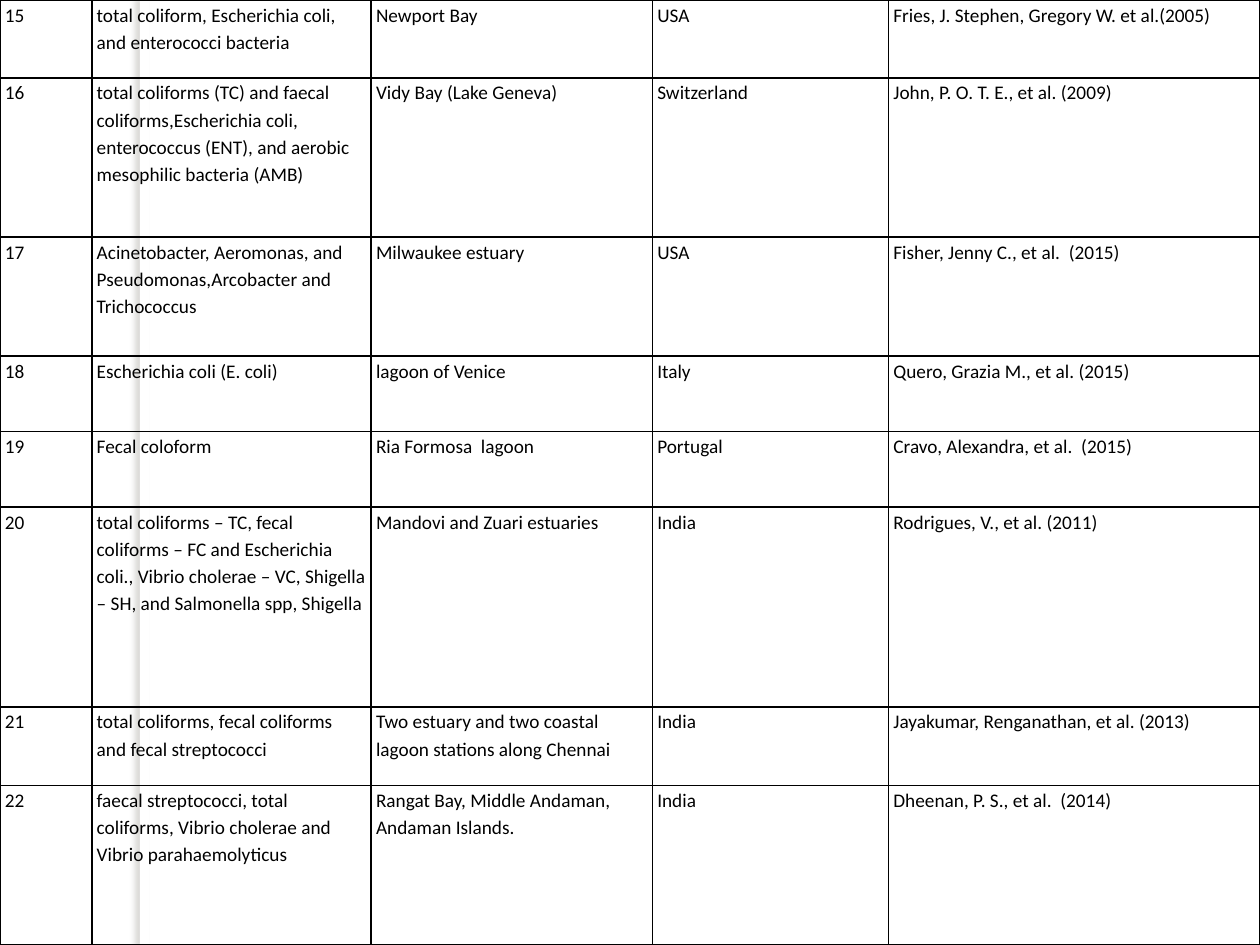
from lxml import etree
from pptx import Presentation
from pptx.dml.color import RGBColor
from pptx.enum import shapes
from pptx.oxml import parse_xml
from pptx.oxml.ns import nsdecls
from pptx.util import Cm, Pt

BLACK = RGBColor(0, 0, 0)
WHITE = RGBColor(255, 255, 255)
SHADE = RGBColor(0x73, 0x6F, 0x63)

WIDTHS = [1.85, 5.63, 5.67, 4.76, 7.49]
HEIGHTS = [1.57, 3.21, 2.4, 1.52, 1.52, 4.03, 1.58, 3.21]
FIRST = 15
# Bacteria, water body, country, reference
STUDIES = [
    ("total coliform, Escherichia coli, and enterococci bacteria",
     "Newport Bay", "USA", "Fries, J. Stephen, Gregory W. et al.(2005)"),
    ("total coliforms (TC) and faecal coliforms,Escherichia coli, "
     "enterococcus (ENT), and aerobic mesophilic bacteria (AMB)",
     "Vidy Bay (Lake Geneva)", "Switzerland", "John, P. O. T. E., et al. (2009)"),
    ("Acinetobacter, Aeromonas, and Pseudomonas,Arcobacter and Trichococcus",
     "Milwaukee estuary", "USA", "Fisher, Jenny C., et al.  (2015)"),
    ("Escherichia coli (E. coli)",
     "lagoon of Venice", "Italy", "Quero, Grazia M., et al. (2015)"),
    ("Fecal coloform",
     "Ria Formosa  lagoon", "Portugal", "Cravo, Alexandra, et al.  (2015)"),
    ("total coliforms – TC, fecal coliforms – FC and Escherichia coli., "
     "Vibrio cholerae – VC, Shigella – SH, and Salmonella spp, Shigella",
     "Mandovi and Zuari estuaries", "India", "Rodrigues, V., et al. (2011)"),
    ("total coliforms, fecal coliforms and fecal streptococci",
     "Two estuary and two coastal lagoon stations along Chennai",
     "India", "Jayakumar, Renganathan, et al. (2013)"),
    ("faecal streptococci, total coliforms, Vibrio cholerae and Vibrio parahaemolyticus",
     "Rangat Bay, Middle Andaman, Andaman Islands.",
     "India", "Dheenan, P. S., et al.  (2014)"),
]
INSETS = {"margin_left": Cm(0.1), "margin_right": Cm(0.1),
          "margin_top": 0, "margin_bottom": 0}
FONT = {"name": "Calibri", "size": Pt(11), "bold": False}


def put(obj, form):
    """Set each attribute of obj that form names."""
    for key, val in form.items():
        setattr(obj, key, val)


def frame(cell):
    """Draw a thin line on all four sides of the cell."""
    props = cell._tc.get_or_add_tcPr()
    for pos, side in enumerate(("lnL", "lnR", "lnT", "lnB")):
        props.insert(pos, parse_xml(
            f'<a:{side} {nsdecls("a")} w="{Pt(1)}"><a:solidFill>'
            f'<a:srgbClr val="{BLACK}"/></a:solidFill></a:{side}>'))


deck = Presentation()
put(deck, {"slide_width": Cm(25.4), "slide_height": Cm(19.05)})
slide = deck.slides.add_slide(deck.slide_layouts[6])

# White strip with a soft shadow on its left and right
strip = slide.shapes.add_shape(
    shapes.MSO_SHAPE.RECTANGLE, Cm(2.82), 0, Cm(0.2), deck.slide_height)
strip.fill.solid()
strip.fill.fore_color.rgb = WHITE
strip.line.fill.background()
strip.shadow.inherit = False
glow = strip._element.spPr.find("{*}effectLst")
glow.append(parse_xml(
    f'<a:outerShdw {nsdecls("a")} blurRad="{Pt(3)}" dist="{Pt(3)}" dir="10800000" '
    f'algn="tl" rotWithShape="0"><a:srgbClr val="{SHADE}"><a:alpha val="25000"/>'
    '</a:srgbClr></a:outerShdw>'))

table = slide.shapes.add_table(
    len(STUDIES), len(WIDTHS), 0, 0, deck.slide_width, deck.slide_height).table
put(table, {"first_row": False, "horz_banding": False})
for col, width in zip(table.columns, WIDTHS):
    col.width = Cm(width)
for num, (row, height, study) in enumerate(zip(table.rows, HEIGHTS, STUDIES), FIRST):
    row.height = Cm(height)
    for cell, words in zip(row.cells, (str(num), *study)):
        put(cell, INSETS)
        cell.fill.background()
        frame(cell)
        para = cell.text_frame.paragraphs[0]
        para.line_spacing = 1.15
        run = para.add_run()
        run.text = words
        put(run.font, FONT)
        run.font.color.rgb = BLACK

deck.save("out.pptx")
